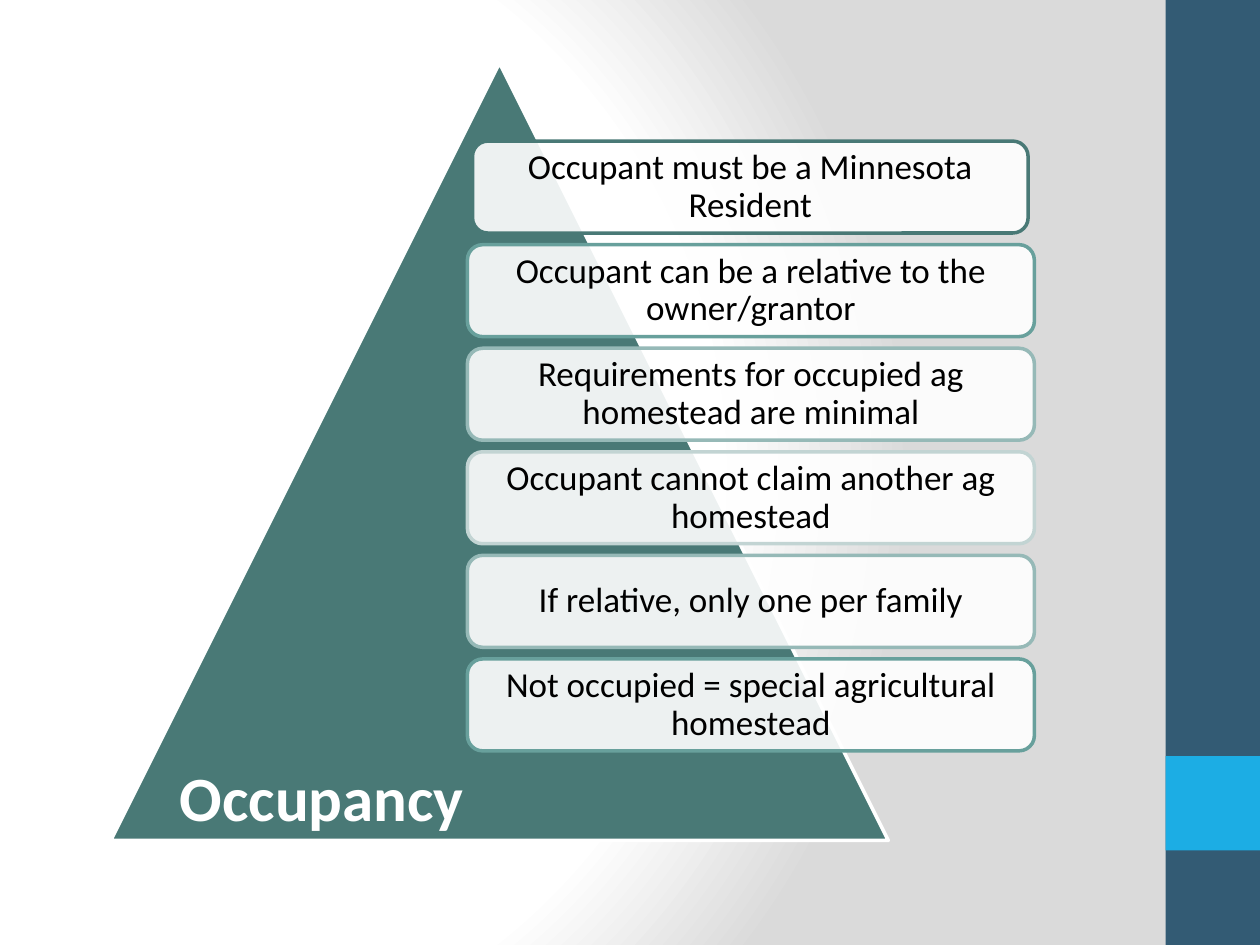
from pptx import Presentation
from pptx.dml.color import RGBColor
from pptx.enum.shapes import MSO_SHAPE
from pptx.enum.text import MSO_ANCHOR, PP_ALIGN
from pptx.oxml import parse_xml
from pptx.oxml.ns import nsdecls, qn
from pptx.util import Inches, Pt
from lxml import etree

RECT, ROUNDED = MSO_SHAPE.RECTANGLE, MSO_SHAPE.ROUNDED_RECTANGLE
TRIANGLE = MSO_SHAPE.ISOSCELES_TRIANGLE
FONT = "Calibri"
TITLE = "Occupancy"

# Rule text, outline colour, left, width
RULES = [
    ("Occupant must be a Minnesota Resident", "497976", 3.75, 4.41),
    ("Occupant can be a relative to the owner/grantor", "68A09C", 3.71, 4.5),
    ("Requirements for occupied ag homestead are minimal", "96B9B7", 3.71, 4.5),
    ("Occupant cannot claim another ag homestead", "C2D4D3", 3.71, 4.5),
    ("If relative, only one per family", "96B9B7", 3.71, 4.5),
    ("Not occupied = special agricultural homestead", "68A09C", 3.71, 4.5),
]
FIRST_TOP, LAST_TOP, BOX_HEIGHT = 1.12, 5.23, 0.73
STEP = (LAST_TOP - FIRST_TOP) / (len(RULES) - 1)

BACKGROUND_STOPS = [(0, "FFFFFF"), (75, "FFFFFF"), (100, "DADADA")]


def rgb(value):
    return RGBColor.from_string(value)


def add_shape(s, kind, box, fill, line=None):
    sp = s.shapes.add_shape(kind, *map(Inches, box))
    sp.shadow.inherit = False
    sp.fill.solid()
    sp.fill.fore_color.rgb = rgb(fill)
    if line:
        sp.line.color.rgb = rgb(line)
        sp.line.width = Pt(2)
    else:
        sp.line.fill.background()
    return sp


def set_text(tf, text, size, color, bold=False):
    p = tf.paragraphs[0]
    p.text = text
    p.font.name, p.font.size, p.font.bold = FONT, Pt(size), bold
    p.font.color.rgb = rgb(color)
    return p


def set_opacity(sp, percent):
    clr = sp.fill._xPr.find(qn("a:solidFill"))[0]
    etree.SubElement(clr, qn("a:alpha")).set("val", str(percent * 1000))


def set_background(s):
    stops = "".join(
        f'<a:gs pos="{pos * 1000}"><a:srgbClr val="{color}"/></a:gs>'
        for pos, color in BACKGROUND_STOPS)
    s.element.cSld.insert(0, parse_xml(
        f'<p:bg {nsdecls("p", "a")}><p:bgPr><a:gradFill rotWithShape="1">'
        f'<a:gsLst>{stops}</a:gsLst><a:path path="circle">'
        '<a:fillToRect l="20000" t="50000" r="100000" b="50000"/></a:path>'
        '</a:gradFill><a:effectLst/></p:bgPr></p:bg>'))


prs = Presentation()
prs.slide_width, prs.slide_height = Inches(10), Inches(7.5)
s = prs.slides.add_slide(prs.slide_layouts[6])
set_background(s)

# Side band and accent square
add_shape(s, RECT, (9.25, 0, 0.75, 7.5), "335B74")
add_shape(s, RECT, (9.25, 6, 0.75, 0.75), "1CADE4")

# Pyramid
add_shape(s, TRIANGLE, (0.88, 0.5, 6.17, 6.17), "497976", "FFFFFF")

# Rule boxes
for i, (text, color, left, width) in enumerate(RULES):
    box = (left, FIRST_TOP + i * STEP, width, BOX_HEIGHT)
    sp = add_shape(s, ROUNDED, box, "FFFFFF", color)
    set_opacity(sp, 90)
    tf = sp.text_frame
    tf.word_wrap = True
    tf.vertical_anchor = MSO_ANCHOR.MIDDLE
    tf.margin_left = tf.margin_right = Inches(0.08)
    tf.margin_top = tf.margin_bottom = Inches(0.08)
    p = set_text(tf, text, 20, "000000")
    p.alignment = PP_ALIGN.CENTER
    p.line_spacing = 0.9

# Title at the pyramid's base
tf = s.shapes.add_textbox(*map(Inches, (1.33, 5.97, 3.08, 0.71))).text_frame
tf.word_wrap = True
set_text(tf, TITLE, 36, "FFFFFF", bold=True)

prs.save("out.pptx")
